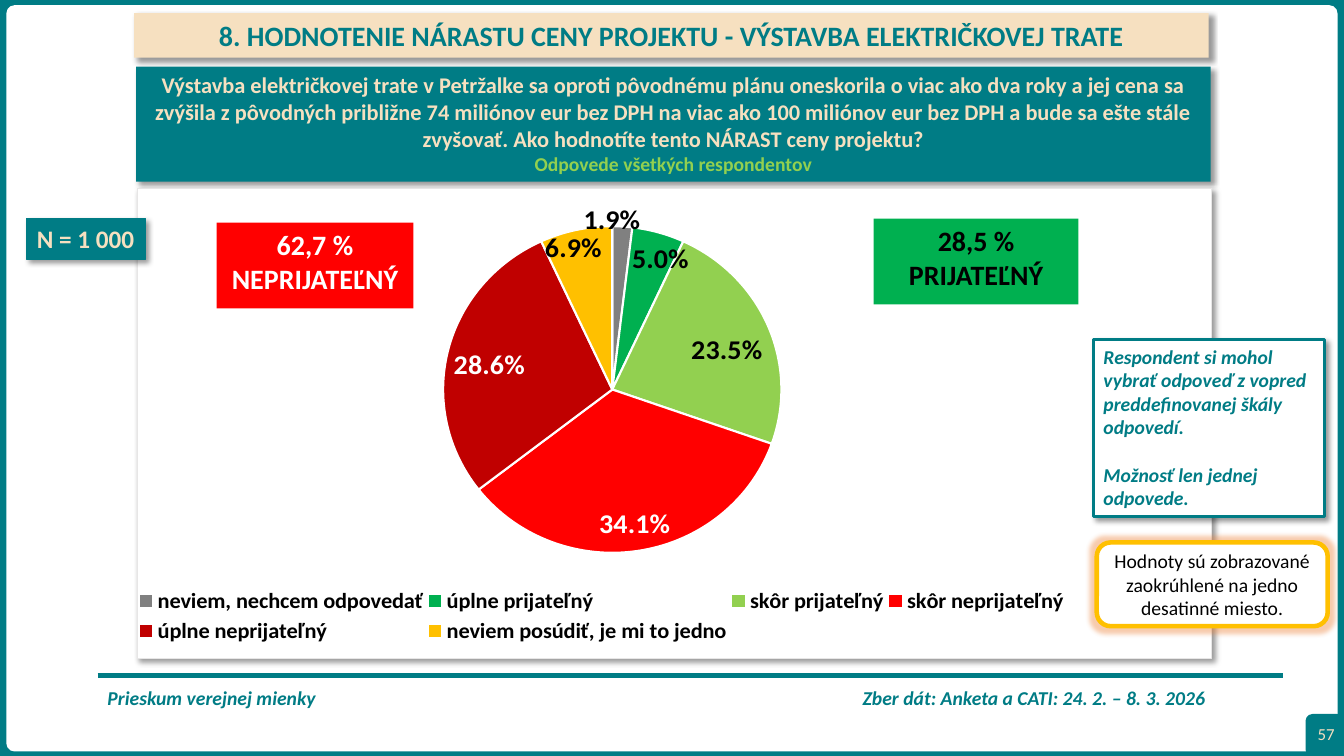
import dataclasses

import lxml.etree
import pptx
import pptx.chart.data
import pptx.dml.color
import pptx.enum.chart
import pptx.enum.shapes
import pptx.enum.text
import pptx.oxml
import pptx.oxml.ns
import pptx.util

Cm = pptx.util.Cm
Pt = pptx.util.Pt
qn = pptx.oxml.ns.qn
SHAPE = pptx.enum.shapes.MSO_SHAPE
ALIGN = pptx.enum.text.PP_ALIGN
ANCHOR = pptx.enum.text.MSO_ANCHOR
LABEL = pptx.enum.chart.XL_LABEL_POSITION


@dataclasses.dataclass(frozen=True)
class Theme:
    font: str = "Calibri"
    teal: str = "007C85"
    sand: str = "F6E0C0"
    white: str = "FFFFFF"
    black: str = "000000"
    border: str = "E7E6E6"
    lime: str = "92D050"
    green: str = "00B050"
    red: str = "FF0000"
    dark_red: str = "C00000"
    amber: str = "FFC000"
    grey: str = "808080"
    glow: str = "ED7D31"
    large: int = 20
    badge: int = 18
    medium: int = 16
    small: int = 14
    number: int = 12


THEME = Theme()


def rgb(value):
    return pptx.dml.color.RGBColor.from_string(value)


def within(box, left, top, width, height):
    return box[0] + left, box[1] + top, width, height


def style_font(font, size, color, **flags):
    for name, value in dict(name=THEME.font, size=Pt(size), **flags).items():
        setattr(font, name, value)
    font.color.rgb = rgb(color)


def add_effect(shape, tag, color, alpha, **attributes):
    effects = shape.element.spPr.find(qn("a:effectLst"))
    effect = lxml.etree.SubElement(effects, qn(tag), attributes)
    tint = lxml.etree.SubElement(effect, qn("a:srgbClr"), val=color)
    lxml.etree.SubElement(tint, qn("a:alpha"), val=str(alpha * 1000))


def finish(shape, fill, line=None, weight=1, shadow=False):
    shape.shadow.inherit = False
    shape.fill.solid()
    shape.fill.fore_color.rgb = rgb(fill)
    if line:
        shape.line.color.rgb = rgb(line)
        shape.line.width = Pt(weight)
    else:
        shape.line.fill.background()
    if shadow:
        add_effect(shape, "a:outerShdw", THEME.black, 40, blurRad=str(Pt(4)),
                   dist=str(Pt(3)), dir="2700000", algn="tl", rotWithShape="0")


def add_panel(page, box, fill, line=None, weight=1, shadow=False, preset=SHAPE.RECTANGLE):
    shape = page.shapes.add_shape(preset, *map(Cm, box))
    finish(shape, fill, line, weight, shadow)
    return shape


def write(shape, lines, size, color, align=ALIGN.CENTER, anchor=ANCHOR.TOP, wrap=True, **flags):
    frame = shape.text_frame
    settings = dict(word_wrap=wrap, vertical_anchor=anchor,
                    auto_size=pptx.enum.text.MSO_AUTO_SIZE.NONE)
    for name, value in settings.items():
        setattr(frame, name, value)
    frame.text = "\n".join(lines)
    for para in frame.paragraphs:
        para.alignment = align
        style_font(para.font, size, color, **flags)
    return frame.paragraphs


def build_frame(page, box):
    width, height = box[2:]
    add_panel(page, box, THEME.teal, THEME.teal)
    inner = add_panel(page, within(box, 0.18, 0.15, width - 0.36, height - 0.28),
                      THEME.white, THEME.white, preset=SHAPE.ROUNDED_RECTANGLE)
    inner.adjustments[0] = 0.01
    corner = within(box, width - 0.95, height - 1.04, 0.95, 1.04)
    add_panel(page, corner, THEME.teal, THEME.teal, preset=SHAPE.ROUNDED_RECTANGLE)
    number = page.shapes.add_textbox(*map(Cm, within(corner, -0.15, -0.03, 1.3, 1.02)))
    write(number, ["57"], THEME.number, THEME.sand, anchor=ANCHOR.MIDDLE)


def build_footer(page, box):
    left, top, width, height = box
    rule = page.shapes.add_connector(pptx.enum.shapes.MSO_CONNECTOR.STRAIGHT,
                                     Cm(left), Cm(top), Cm(left + width), Cm(top))
    rule.line.color.rgb = rgb(THEME.teal)
    rule.line.width = Pt(3)
    lxml.etree.SubElement(rule.element.spPr, qn("a:effectLst"))
    text = page.shapes.add_textbox(*map(Cm, within(box, 0, 0.3, width, height - 0.3)))
    para = write(text, ["Prieskum verejnej mienky\tZber dát: Anketa a CATI: 24. 2. – 8. 3. 2026"],
                 THEME.small, THEME.teal, align=ALIGN.LEFT, bold=True, italic=True)[0]
    tabs = lxml.etree.Element(qn("a:tabLst"))
    lxml.etree.SubElement(tabs, qn("a:tab"), pos=str(Cm(19.03)), algn="l")
    para._p.get_or_add_pPr().insert(0, tabs)
    para.line_spacing = 0.7


def build_heading(page, box):
    title = page.shapes.title
    page.shapes.element.append(title.element)
    for name, value in zip(("left", "top", "width", "height"), within(box, 0, 0, box[2], 1.12)):
        setattr(title, name, Cm(value))
    finish(title, THEME.sand, shadow=True)
    write(title, ["8. HODNOTENIE NÁRASTU CENY PROJEKTU - VÝSTAVBA ELEKTRIČKOVEJ TRATE"],
          THEME.large, THEME.teal, bold=True)
    question = add_panel(page, within(box, 0.05, 1.35, box[2], 2.9), THEME.teal, shadow=True)
    paras = write(question, [
        "Výstavba električkovej trate v Petržalke sa oproti pôvodnému plánu oneskorila o viac ako "
        "dva roky a jej cena sa zvýšila z pôvodných približne 74 miliónov eur bez DPH na viac ako "
        "100 miliónov eur bez DPH a bude sa ešte stále zvyšovať. Ako hodnotíte tento NÁRAST "
        "ceny projektu?",
        "Odpovede všetkých respondentov"], THEME.medium, THEME.sand, bold=True)
    style_font(paras[1].font, THEME.small, THEME.lime)


def set_layout(parent, index, target=None, edge=True, **fractions):
    for old in parent.findall(qn("c:layout")):
        parent.remove(old)
    layout = pptx.oxml.parse_xml(
        '<c:layout xmlns:c="http://schemas.openxmlformats.org/drawingml/2006/chart"/>')
    manual = lxml.etree.SubElement(layout, qn("c:manualLayout"))
    if target:
        lxml.etree.SubElement(manual, qn("c:layoutTarget"), val=target)
    for mode in ("xMode", "yMode") if edge else ():
        lxml.etree.SubElement(manual, qn("c:" + mode), val="edge")
    for name, value in fractions.items():
        lxml.etree.SubElement(manual, qn("c:" + name), val=str(value))
    parent.insert(index, layout)


def build_pie(page, box):
    answers = [
        ("neviem, nechcem odpovedať", 0.019, THEME.grey, THEME.black, -0.01, 0),
        ("úplne prijateľný", 0.05, THEME.green, THEME.black, 0.03, 0.01),
        ("skôr prijateľný", 0.235, THEME.lime, THEME.black, 0, 0.01),
        ("skôr neprijateľný", 0.341, THEME.red, THEME.white, 0.03, -0.01),
        ("úplne neprijateľný", 0.286, THEME.dark_red, THEME.white, 0, -0.01),
        ("neviem posúdiť, je mi to jedno", 0.069, THEME.amber, THEME.black, -0.03, -0.01),
    ]
    data = pptx.chart.data.CategoryChartData(number_format="###0.0%")
    data.categories = [answer[0] for answer in answers]
    data.add_series("Series 1", [answer[1] for answer in answers])
    chart = page.shapes.add_chart(pptx.enum.chart.XL_CHART_TYPE.PIE, *map(Cm, box), data).chart
    chart.has_title = False
    style_font(chart.font, THEME.small, THEME.black, bold=True)
    chart.has_legend = True
    legend = chart.legend
    legend.position = pptx.enum.chart.XL_LEGEND_POSITION.BOTTOM
    legend.include_in_layout = False
    style_font(legend.font, THEME.medium, THEME.black, bold=True)
    set_layout(chart.element.find(".//" + qn("c:plotArea")), 0, "inner",
               x=0.28, y=0.05, w=0.33, h=0.72)
    set_layout(chart.element.find(".//" + qn("c:legend")), 1, x=0, y=0.84, w=0.87, h=0.14)
    plot = chart.plots[0]
    plot.vary_by_categories = True
    series = plot.series[0]
    labels = series.data_labels
    settings = dict(show_value=True, number_format="###0.0%", number_format_is_linked=False,
                    position=LABEL.INSIDE_END)
    for name, value in settings.items():
        setattr(labels, name, value)
    style_font(labels.font, THEME.large, THEME.black, bold=True)
    for index, (_, share, fill, ink, _, _) in enumerate(answers):
        point = series.points[index]
        point.format.fill.solid()
        point.format.fill.fore_color.rgb = rgb(fill)
        point.format.line.color.rgb = rgb(THEME.white)
        point.format.line.width = Pt(1.5)
        style_font(point.data_label.font, THEME.large, ink, bold=True)
        point.data_label.position = LABEL.OUTSIDE_END if share < 0.02 else LABEL.INSIDE_END
    for label, answer in zip(chart.element.iter(qn("c:dLbl")), answers):
        set_layout(label, 1, edge=False, x=answer[4], y=answer[5])
    for leader in chart.element.iter(qn("c:showLeaderLines")):
        leader.set("val", "0")


def build_results(page, box):
    add_panel(page, within(box, 0.08, 0.03, *box[2:]), THEME.white, THEME.border, shadow=True)
    build_pie(page, box)
    totals = [
        (18.64, 0.79, 5.16, THEME.green, THEME.black, ["28,5 %", "PRIJATEĽNÝ"]),
        (2.08, 0.89, 4.96, THEME.red, THEME.white, ["62,7 %", "NEPRIJATEĽNÝ"]),
    ]
    for left, top, width, fill, ink, lines in totals:
        total = add_panel(page, within(box, left, top, width, 2.16), fill)
        write(total, lines, THEME.large, ink, bold=True)
    sample = add_panel(page, within(box, -2.7, 0.79, 3, 1.02), THEME.teal, THEME.teal, 0.75, True)
    write(sample, ["N = 1 000"], THEME.badge, THEME.sand, align=ALIGN.LEFT, wrap=False, bold=True)


def build_notes(page, box):
    method = add_panel(page, within(box, 0, 0, 5.82, 4.45), THEME.white, THEME.teal, 2.25, True)
    paras = write(method, [
        "Respondent si mohol vybrať odpoveď z vopred preddefinovanej škály odpovedí.",
        "Možnosť len jednej odpovede."],
        THEME.small, THEME.teal, align=ALIGN.LEFT, bold=True, italic=True)
    paras[1].space_before = Pt(17)
    rounding = add_panel(page, within(box, 0.08, 5.11, 5.82, 2.11), THEME.white, THEME.amber,
                         3.25, preset=SHAPE.ROUNDED_RECTANGLE)
    add_effect(rounding, "a:glow", THEME.glow, 40, rad=str(Pt(7)))
    write(rounding, ["Hodnoty sú zobrazované zaokrúhlené na jedno desatinné miesto."],
          THEME.small, THEME.black, anchor=ANCHOR.MIDDLE)


def main():
    deck = pptx.Presentation()
    deck.slide_width, deck.slide_height = Cm(33.87), Cm(19.05)
    page = deck.slides.add_slide(deck.slide_layouts[5])
    build_frame(page, (0, 0, 33.87, 19.05))
    build_footer(page, (2.46, 17.02, 29.87, 1.42))
    build_heading(page, (3.38, 0.33, 27.08, 4.25))
    build_results(page, (3.38, 4.72, 27.08, 11.84))
    build_notes(page, (27.56, 8.56, 5.9, 7.22))
    deck.save("out.pptx")


if __name__ == "__main__":
    main()
